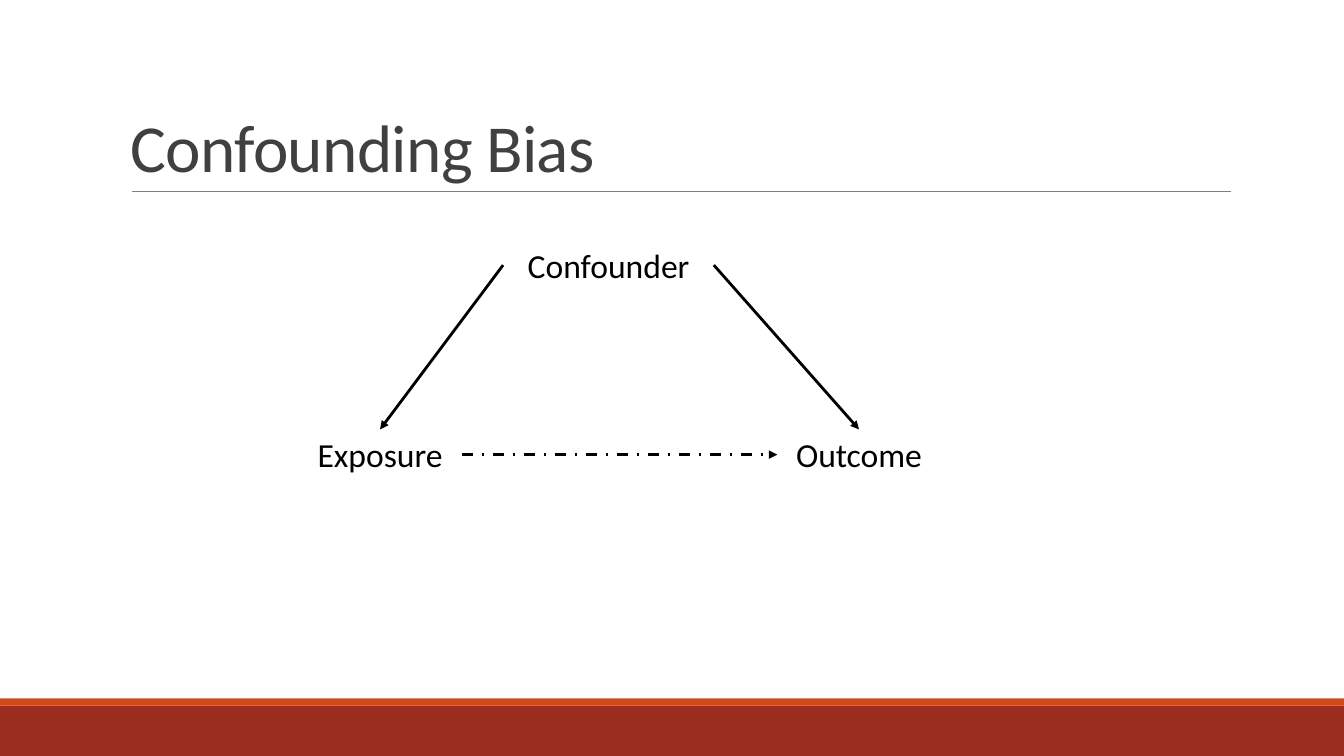
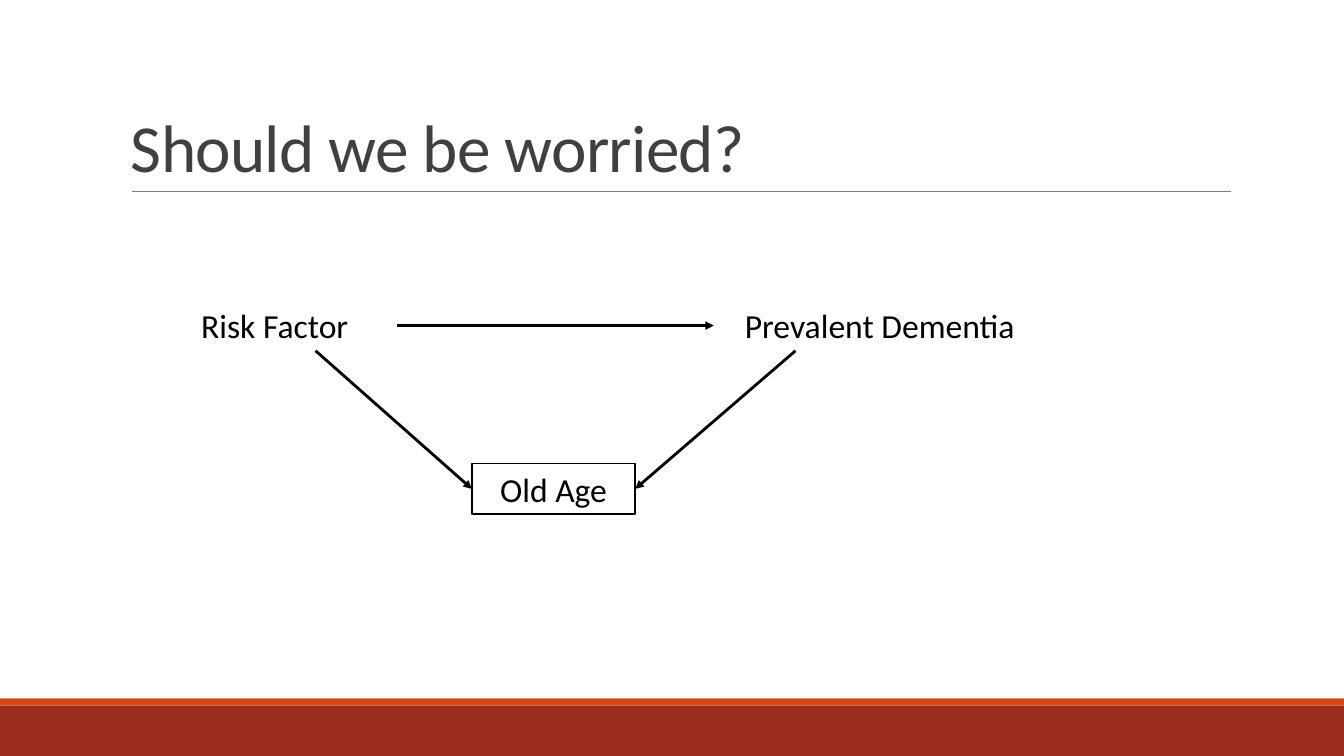
from lxml.etree import SubElement
from pptx import Presentation
from pptx.dml.color import RGBColor
from pptx.enum.dml import MSO_LINE
from pptx.enum.shapes import MSO_CONNECTOR, MSO_SHAPE
from pptx.enum.text import MSO_ANCHOR, PP_ALIGN
from pptx.oxml.ns import qn
from pptx.util import Inches, Pt

FONT = "Calibri"
COLORS = {"band": "9B2D1F", "accent": "D34817", "rule": "808080",
          "title": "404040", "ink": "000000"}
WIDTH, HEIGHT = 13.33, 7.5
LABEL_HEIGHT = 0.5
TOP, LEFT, BOTTOM, RIGHT = range(4)

# labels: text -> (left, top, width, boxed)
# arrows: (start, end, dashed); an end is (label, side) or an (x, y) point
SLIDES = [
    {"title": "Confounding Bias",
     "labels": {"Exposure": (2.96, 4.26, 1.62, False),
                "Outcome": (7.71, 4.26, 1.62, False),
                "Confounder": (4.99, 2.38, 2.09, False)},
     "arrows": [(("Exposure", RIGHT), ("Outcome", LEFT), True),
                (("Confounder", RIGHT), ("Outcome", TOP), False),
                (("Confounder", LEFT), ("Exposure", TOP), False)]},
    {"title": "Should we be worried?",
     "labels": {"Risk Factor": (1.51, 2.98, 2.43, False),
                "Prevalent Dementia": (7.08, 2.98, 3.29, False),
                "Old Age": (4.68, 4.6, 1.62, True)},
     "arrows": [((7.89, 3.48), ("Old Age", RIGHT), False),
                ((3.13, 3.48), ("Old Age", LEFT), False),
                (("Risk Factor", RIGHT), ("Prevalent Dementia", LEFT), False)]},
]


def rgb(name):
    return RGBColor.from_string(COLORS[name])


def set_text(sp, text, size, color, align):
    tf = sp.text_frame
    tf.word_wrap = True
    p = tf.paragraphs[0]
    p.text = text
    p.alignment = align
    p.font.name, p.font.size = FONT, Pt(size)
    p.font.color.rgb = rgb(color)
    return p


def add_line(s, start, end, color, width):
    line = s.shapes.add_connector(MSO_CONNECTOR.STRAIGHT,
                                  *(Inches(v) for v in (*start, *end)))
    line.line.color.rgb = rgb(color)
    line.line.width = Pt(width)
    SubElement(line._element.spPr, qn("a:effectLst"))
    return line


def add_frame(s, title):
    """Draw what every slide shares: bottom bands, title and its rule."""
    for top, height, color in ((7, 0.5, "band"), (6.93, 0.07, "accent")):
        band = s.shapes.add_shape(MSO_SHAPE.RECTANGLE, 0, Inches(top),
                                  Inches(WIDTH), Inches(height))
        band.shadow.inherit = False
        band.fill.solid()
        band.fill.fore_color.rgb = rgb(color)
        band.line.fill.background()
    add_line(s, (1.31, 1.9), (12.21, 1.9), "rule", 0.5)
    box = s.shapes.add_textbox(Inches(1.2), Inches(0.31), Inches(11), Inches(1.59))
    box.text_frame.vertical_anchor = MSO_ANCHOR.BOTTOM
    p = set_text(box, title, 48, "title", PP_ALIGN.LEFT)
    p.line_spacing = 0.85
    p.runs[0].font._element.set("spc", "-50")


def add_label(s, text, left, top, width, boxed):
    area = [Inches(v) for v in (left, top, width, LABEL_HEIGHT)]
    if boxed:
        sp = s.shapes.add_shape(MSO_SHAPE.RECTANGLE, *area)
        sp.shadow.inherit = False
        sp.fill.background()
        sp.line.color.rgb = rgb("ink")
        sp.line.width = Pt(1)
    else:
        sp = s.shapes.add_textbox(*area)
    sp.text_frame.vertical_anchor = MSO_ANCHOR.TOP
    set_text(sp, text, 24, "ink", PP_ALIGN.CENTER)
    return sp


def add_arrow(s, labels, start, end, dashed):
    points = [(0, 0) if at[0] in labels else at for at in (start, end)]
    arrow = add_line(s, *points, "ink", 2)
    for at, connect in ((start, arrow.begin_connect), (end, arrow.end_connect)):
        if at[0] in labels:
            connect(labels[at[0]], at[1])
    if dashed:
        arrow.line.dash_style = MSO_LINE.DASH_DOT
    SubElement(arrow.line._get_or_add_ln(), qn("a:tailEnd"), type="triangle")


def main():
    prs = Presentation()
    prs.slide_width, prs.slide_height = Inches(WIDTH), Inches(HEIGHT)
    for content in SLIDES:
        s = prs.slides.add_slide(prs.slide_layouts[6])
        add_frame(s, content["title"])
        labels = {text: add_label(s, text, *place)
                  for text, place in content["labels"].items()}
        for arrow in content["arrows"]:
            add_arrow(s, labels, *arrow)
    prs.save("out.pptx")


if __name__ == "__main__":
    main()
